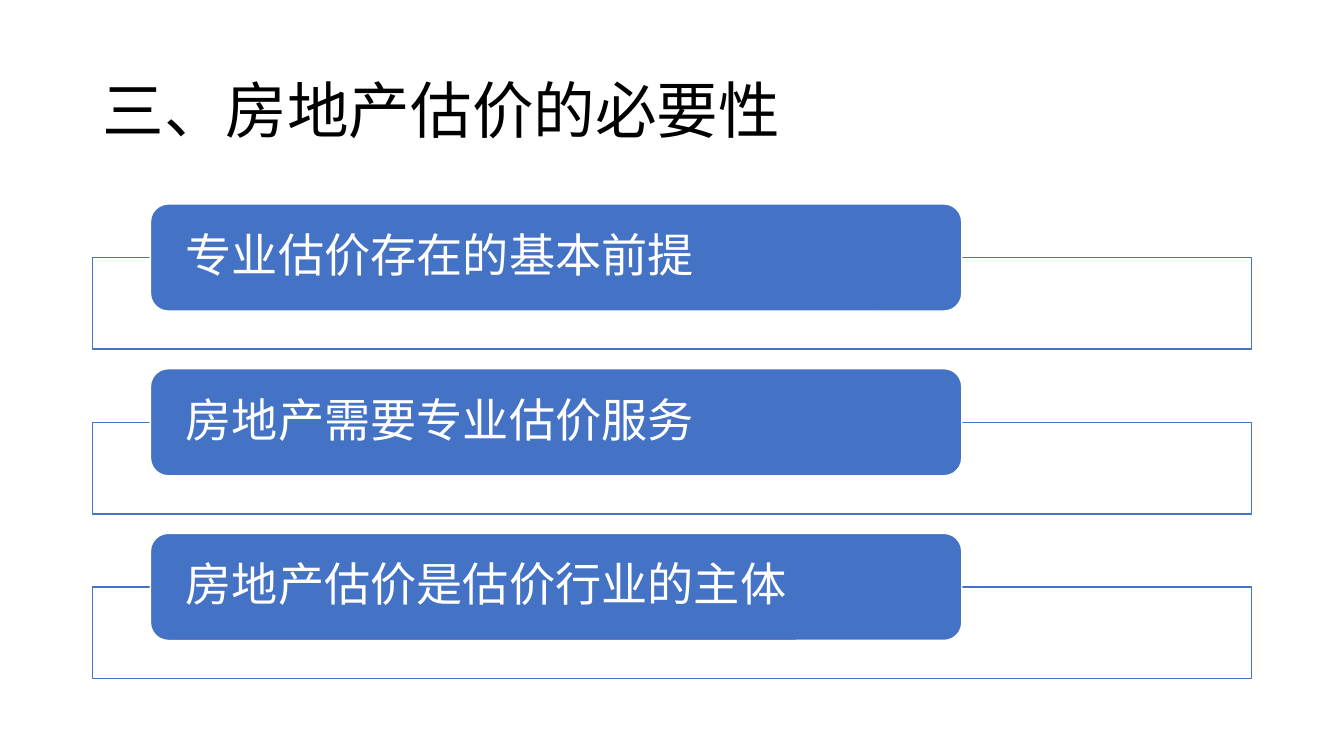
import pptx
import pptx.dml.color
import pptx.enum.shapes
import pptx.enum.text
import pptx.oxml
import pptx.oxml.ns
import pptx.util
from pptx.util import Cm

FONT = "Noto Sans CJK SC"
BLUE, WHITE, BLACK = "4472C4", "FFFFFF", "000000"
TITLE = "三、房地产估价的必要性"
TOPICS = ["专业估价存在的基本前提", "房地产需要专业估价服务", "房地产估价是估价行业的主体"]
ROW_PITCH = 4.15


def color(hex_value):
    return pptx.dml.color.RGBColor.from_string(hex_value)


def write_text(shape, text, size, text_color):
    frame = shape.text_frame
    frame.text = text
    frame.word_wrap = True
    frame.vertical_anchor = pptx.enum.text.MSO_ANCHOR.MIDDLE
    paragraph = frame.paragraphs[0]
    paragraph.alignment = pptx.enum.text.PP_ALIGN.LEFT
    paragraph.line_spacing = 0.9
    font = paragraph.runs[0].font
    font.name = FONT
    font.size = pptx.util.Pt(size)
    font.color.rgb = color(text_color)
    east_asian = pptx.oxml.parse_xml(
        f'<a:ea {pptx.oxml.ns.nsdecls("a")} typeface="{FONT}"/>')
    font._element.find(pptx.oxml.ns.qn("a:latin")).addnext(east_asian)


def add_box(slide, kind, left, top, width, height, fill, line):
    shape = slide.shapes.add_shape(kind, Cm(left), Cm(top), Cm(width), Cm(height))
    shape.shadow.inherit = False
    shape.fill.solid()
    shape.fill.fore_color.rgb = color(fill)
    shape.line.color.rgb = color(line)
    shape.line.width = pptx.util.Pt(1)
    return shape


def add_title(slide, left, top, width, height):
    title = slide.shapes.title
    title.left, title.top, title.width, title.height = map(Cm, (left, top, width, height))
    write_text(title, TITLE, 44, BLACK)


def add_topic(slide, text, left, top, width):
    """Draw an outlined frame with a rounded label overlapping its top edge."""
    shapes = pptx.enum.shapes.MSO_SHAPE
    add_box(slide, shapes.RECTANGLE, left, top + 1.35, width, 2.31, WHITE, BLUE)
    label = add_box(slide, shapes.ROUNDED_RECTANGLE,
                    left + 0.05 * width, top, 0.7 * width, 2.7, BLUE, WHITE)
    frame = label.text_frame
    frame.margin_left = frame.margin_right = Cm(0.76)
    frame.margin_top = frame.margin_bottom = 0
    write_text(label, text, 33, WHITE)


def add_topic_list(slide, left, top, width):
    for row, text in enumerate(TOPICS):
        add_topic(slide, text, left, top + row * ROW_PITCH, width)


def main():
    presentation = pptx.Presentation()
    presentation.slide_width, presentation.slide_height = Cm(33.87), Cm(19.05)
    slide = presentation.slides.add_slide(presentation.slide_layouts.get_by_name("Title Only"))
    add_title(slide, 2.33, 1.01, 29.21, 3.68)
    add_topic_list(slide, 2.33, 5.14, 29.21)
    presentation.save("out.pptx")


if __name__ == "__main__":
    main()
